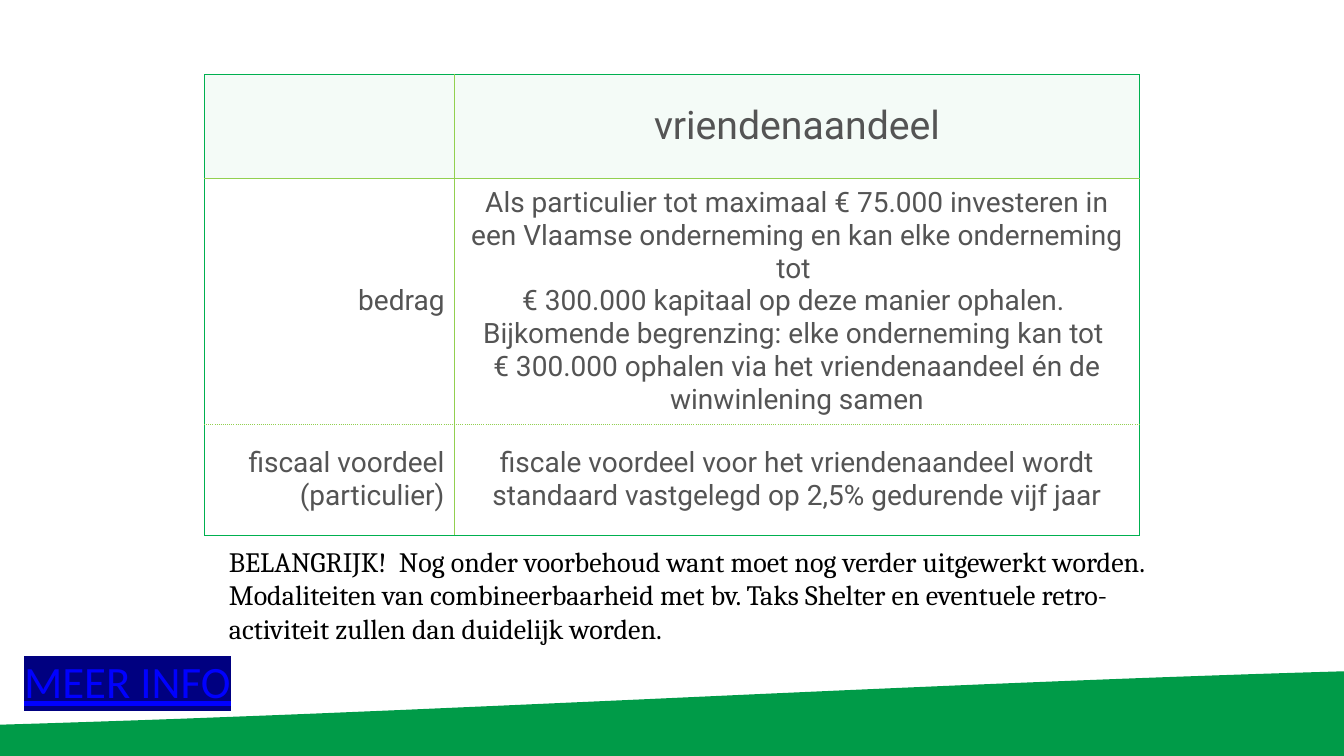
from dataclasses import dataclass
from typing import Optional

from lxml.etree import SubElement
from pptx import Presentation
from pptx.dml.color import RGBColor
from pptx.enum.text import MSO_ANCHOR as Anchor, MSO_AUTO_SIZE as AutoSize, PP_ALIGN as Align
from pptx.oxml import parse_xml
from pptx.oxml.ns import nsdecls, qn
from pptx.util import Inches, Pt

COLORS = {
    "band": "009B48", "frame": "00B050", "grid": "92D050", "header": "F4FBF7",
    "table_text": "545454", "note": "000000", "link": "0000FF", "highlight": "000080",
}
COLUMN_WIDTHS = (2.48, 6.79)
ROW_HEIGHTS = (1.03, 2.44, 1.1)


@dataclass
class TextStyle:
    font: str
    size: int
    color: str
    align: Align = Align.LEFT
    underline: Optional[bool] = None


HEADING = TextStyle("Roboto", 28, "table_text", Align.CENTER)
LABEL = TextStyle("Roboto", 20, "table_text", Align.RIGHT)
DETAIL = TextStyle("Roboto", 20, "table_text", Align.CENTER)
NOTE = TextStyle("Cambria", 20, "note")
LINK = TextStyle("Calibri", 32, "link", underline=True)

ROWS = (
    ("", "vriendenaandeel"),
    ("bedrag",
     "Als particulier tot maximaal € 75.000 investeren in een Vlaamse onderneming "
     "en kan elke onderneming tot \v€ 300.000 kapitaal op deze manier ophalen. \v"
     "Bijkomende begrenzing: elke onderneming kan tot \v"
     "€ 300.000 ophalen via het vriendenaandeel én de winwinlening samen"),
    ("fiscaal voordeel (particulier)",
     "fiscale voordeel voor het vriendenaandeel wordt standaard vastgelegd op 2,5% "
     "gedurende vijf jaar"),
)
NOTE_TEXT = (
    "BELANGRIJK!  Nog onder voorbehoud want moet nog verder uitgewerkt worden. "
    "Modaliteiten van combineerbaarheid met bv. Taks Shelter en eventuele "
    "retro-activiteit zullen dan duidelijk worden."
)


def rgb(name: str) -> RGBColor:
    return RGBColor.from_string(COLORS[name])


def write(frame, text: str, style: TextStyle):
    """Fill the first paragraph of a text frame and format it."""
    para = frame.paragraphs[0]
    para.text = text
    para.alignment = style.align
    para.space_before = Pt(0)
    values = {"name": style.font, "size": Pt(style.size), "underline": style.underline}
    for span in para.runs:
        span.font.color.rgb = rgb(style.color)
        for key, value in values.items():
            setattr(span.font, key, value)
    return para


def set_borders(cell, row: int, column: int) -> None:
    """Green outer frame, lime grid, and a dotted line under the second row."""
    last_row, last_column = len(ROW_HEIGHTS) - 1, len(COLUMN_WIDTHS) - 1
    sides = (
        ("lnL", column == 0, False),
        ("lnR", column == last_column, False),
        ("lnT", row == 0, row == last_row),
        ("lnB", row == last_row, row == last_row - 1),
    )
    properties = cell._tc.get_or_add_tcPr()
    for index, (tag, outer, dotted) in enumerate(sides):
        color = COLORS["frame" if outer else "grid"]
        dash = "sysDot" if dotted else "solid"
        properties.insert(index, parse_xml(
            f'<a:{tag} {nsdecls("a")} w="{Pt(1)}"><a:solidFill><a:srgbClr val="{color}"/>'
            f'</a:solidFill><a:prstDash val="{dash}"/></a:{tag}>'))


def add_band(page) -> None:
    """Draw the green band whose top edge follows a gentle curve."""
    controls = ((0, 7.19), (4.47, 7.06), (8.87, 6.79), (13.33, 6.66))
    steps = 30
    curve = []
    for step in range(steps + 1):
        t = step / steps
        weights = ((1 - t) ** 3, 3 * t * (1 - t) ** 2, 3 * t * t * (1 - t), t ** 3)
        curve.append(tuple(
            Inches(sum(w * point[axis] for w, point in zip(weights, controls)))
            for axis in (0, 1)))
    builder = page.shapes.build_freeform(*curve[0])
    builder.add_line_segments(
        curve[1:] + [(Inches(13.33), Inches(7.5)), (0, Inches(7.5))], close=True)
    band = builder.convert_to_shape()
    band.shadow.inherit = False
    band.fill.solid()
    band.fill.fore_color.rgb = rgb("band")
    band.line.fill.background()


def add_share_table(page) -> None:
    table = page.shapes.add_table(
        len(ROWS), len(COLUMN_WIDTHS), Inches(2.03), Inches(0.74),
        Inches(sum(COLUMN_WIDTHS)), Inches(sum(ROW_HEIGHTS))).table
    table.horz_banding = False
    for column, width in zip(table.columns, COLUMN_WIDTHS):
        column.width = Inches(width)
    for row, height in zip(table.rows, ROW_HEIGHTS):
        row.height = Inches(height)
    for row, texts in enumerate(ROWS):
        for column, text in enumerate(texts):
            cell = table.cell(row, column)
            cell.vertical_anchor = Anchor.MIDDLE
            if row == 0:
                cell.fill.solid()
                cell.fill.fore_color.rgb = rgb("header")
            else:
                cell.fill.background()
            set_borders(cell, row, column)
            style = LABEL if column == 0 else HEADING if row == 0 else DETAIL
            write(cell.text_frame, text, style)


def add_note(page) -> None:
    """Place the reservation below the table in the body placeholder."""
    box = page.placeholders[1]
    place = {"left": 2.17, "top": 5.35, "width": 9.83, "height": 1.1}
    for key, value in place.items():
        setattr(box, key, Inches(value))
    frame = box.text_frame
    frame.auto_size = AutoSize.NONE
    frame.vertical_anchor = Anchor.TOP
    properties = frame.paragraphs[0]._p.get_or_add_pPr()
    properties.set("marL", "0")
    properties.set("indent", "0")
    SubElement(properties, qn("a:buNone"))
    write(frame, NOTE_TEXT, NOTE)


def add_more_info(page) -> None:
    box = page.shapes.add_textbox(Inches(0.14), Inches(6.5), Inches(2.27), Inches(0.59))
    frame = box.text_frame
    frame.word_wrap = False
    frame.auto_size = AutoSize.SHAPE_TO_FIT_TEXT
    para = write(frame, "MEER INFO", LINK)
    para.line_spacing = 0.9
    # Highlight goes between the text fill and the typeface
    latin = para.runs[0].font._element.find(qn("a:latin"))
    latin.addprevious(parse_xml(
        f'<a:highlight {nsdecls("a")}><a:srgbClr val="{COLORS["highlight"]}"/></a:highlight>'))


def main() -> None:
    deck = Presentation()
    deck.slide_width, deck.slide_height = Inches(13.33), Inches(7.5)
    page = deck.slides.add_slide(deck.slide_layouts[1])
    title = page.shapes.title._element
    title.getparent().remove(title)
    add_band(page)
    add_share_table(page)
    add_note(page)
    add_more_info(page)
    deck.save("out.pptx")


if __name__ == "__main__":
    main()
